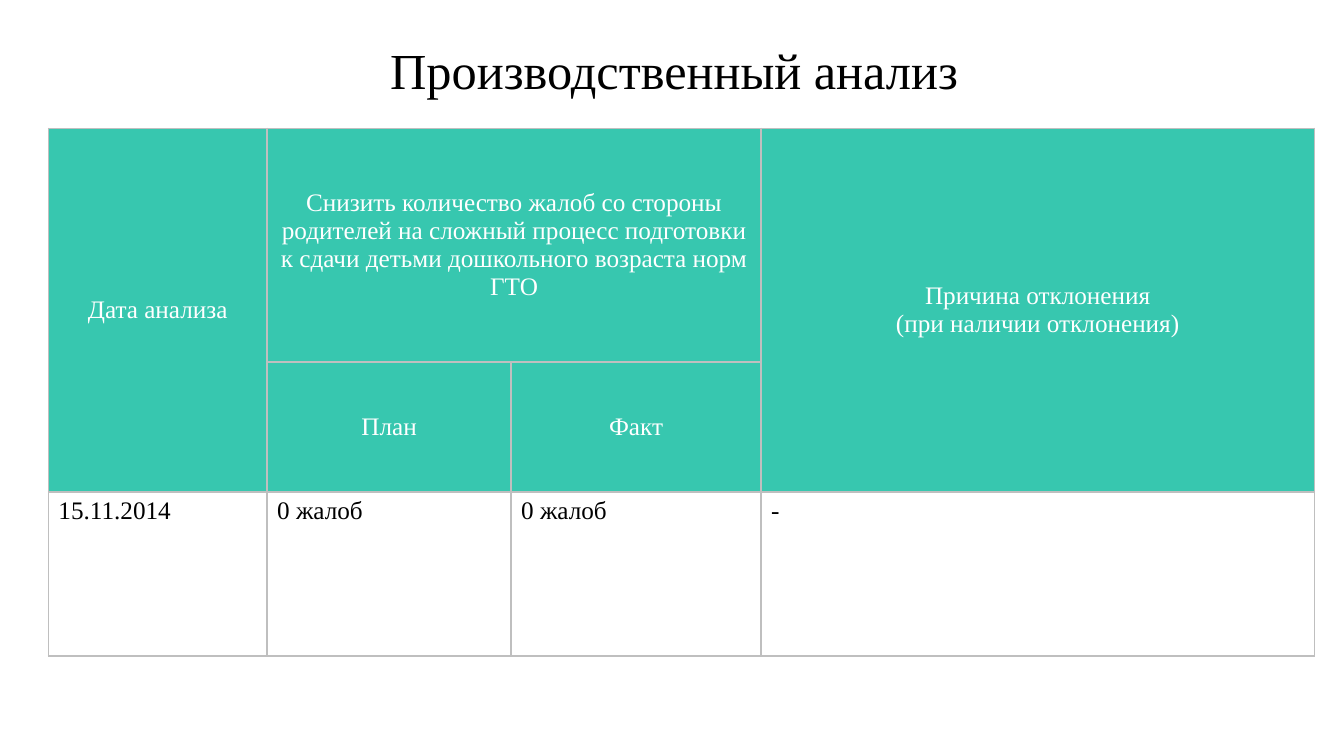
"""Build the production analysis slide with its plan and fact table."""
import pptx
import pptx.dml.color
import pptx.enum.text
import pptx.oxml
import pptx.oxml.ns
import pptx.util
from pptx.util import Cm

TITLE = "Производственный анализ"
HEADERS = [
    (0, 0, 1, 0, ["Дата анализа"]),
    (0, 1, 0, 2, ["Снизить количество жалоб со стороны родителей на сложный процесс "
                  "подготовки к сдачи детьми дошкольного возраста норм ГТО"]),
    (0, 3, 1, 3, ["Причина отклонения", "(при наличии отклонения)"]),
    (1, 1, 1, 1, ["План"]),
    (1, 2, 1, 2, ["Факт"]),
]
RESULTS = ["15.11.2014", "0 жалоб", "0 жалоб", "-"]
COLUMN_WIDTHS = [5.51, 6.15, 6.3, 13.94]
ROW_HEIGHTS = [5.89, 3.28, 4.13]
HEADER_ROWS = 2

FONT = "Times New Roman"
BLACK = pptx.dml.color.RGBColor(0x00, 0x00, 0x00)
WHITE = pptx.dml.color.RGBColor(0xFF, 0xFF, 0xFF)
TEAL = pptx.dml.color.RGBColor(0x37, 0xC7, 0xAF)
GREY = pptx.dml.color.RGBColor(0xBF, 0xBF, 0xBF)
CENTER = pptx.enum.text.PP_ALIGN.CENTER
LEFT = pptx.enum.text.PP_ALIGN.LEFT
MIDDLE = pptx.enum.text.MSO_ANCHOR.MIDDLE
TOP = pptx.enum.text.MSO_ANCHOR.TOP


def write_text(frame, lines, size=18, color=BLACK, align=LEFT, spacing=None):
    """Fill a text frame with one paragraph per line."""
    for index, line in enumerate(lines):
        paragraph = frame.add_paragraph() if index else frame.paragraphs[0]
        paragraph.alignment = align
        paragraph.line_spacing = spacing
        run = paragraph.add_run()
        run.text = line
        run.font.name = FONT
        run.font.size = pptx.util.Pt(size)
        run.font.color.rgb = color


def add_borders(cell):
    """Draw a thin grey line on every side of a cell."""
    properties = cell._tc.get_or_add_tcPr()
    for side in ("lnL", "lnR", "lnT", "lnB"):
        properties.append(pptx.oxml.parse_xml(
            f'<a:{side} {pptx.oxml.ns.nsdecls("a")} w="{pptx.util.Pt(1)}">'
            f'<a:solidFill><a:srgbClr val="{GREY}"/></a:solidFill></a:{side}>'))


def add_analysis_table(slide):
    """Add the table with merged headers and one row of results."""
    table = slide.shapes.add_table(
        len(ROW_HEIGHTS), len(COLUMN_WIDTHS), Cm(1.22), Cm(3.23),
        Cm(sum(COLUMN_WIDTHS)), Cm(sum(ROW_HEIGHTS))).table
    table.first_row = False
    table.horz_banding = False
    for column, width in zip(table.columns, COLUMN_WIDTHS):
        column.width = Cm(width)
    for index, (row, height) in enumerate(zip(table.rows, ROW_HEIGHTS)):
        row.height = Cm(height)
        for cell in row.cells:
            add_borders(cell)
            if index < HEADER_ROWS:
                cell.fill.solid()
                cell.fill.fore_color.rgb = TEAL
                cell.vertical_anchor = MIDDLE
            else:
                cell.fill.background()
                cell.vertical_anchor = TOP
    for top, left, bottom, right, lines in HEADERS:
        cell = table.cell(top, left)
        if (top, left) != (bottom, right):
            cell.merge(table.cell(bottom, right))
        write_text(cell.text_frame, lines, color=WHITE, align=CENTER)
    for column, result in enumerate(RESULTS):
        write_text(table.cell(HEADER_ROWS, column).text_frame, [result])


def main():
    """Create the presentation and save it."""
    presentation = pptx.Presentation()
    presentation.slide_width = Cm(33.87)
    presentation.slide_height = Cm(19.05)
    slide = presentation.slides.add_slide(presentation.slide_layouts[5])
    title = slide.shapes.title
    title.left, title.top, title.width, title.height = Cm(0.86), Cm(0.91), Cm(32.26), Cm(1.85)
    title.text_frame.vertical_anchor = MIDDLE
    write_text(title.text_frame, [TITLE], size=36, align=CENTER, spacing=0.9)
    add_analysis_table(slide)
    presentation.save("out.pptx")


if __name__ == "__main__":
    main()
